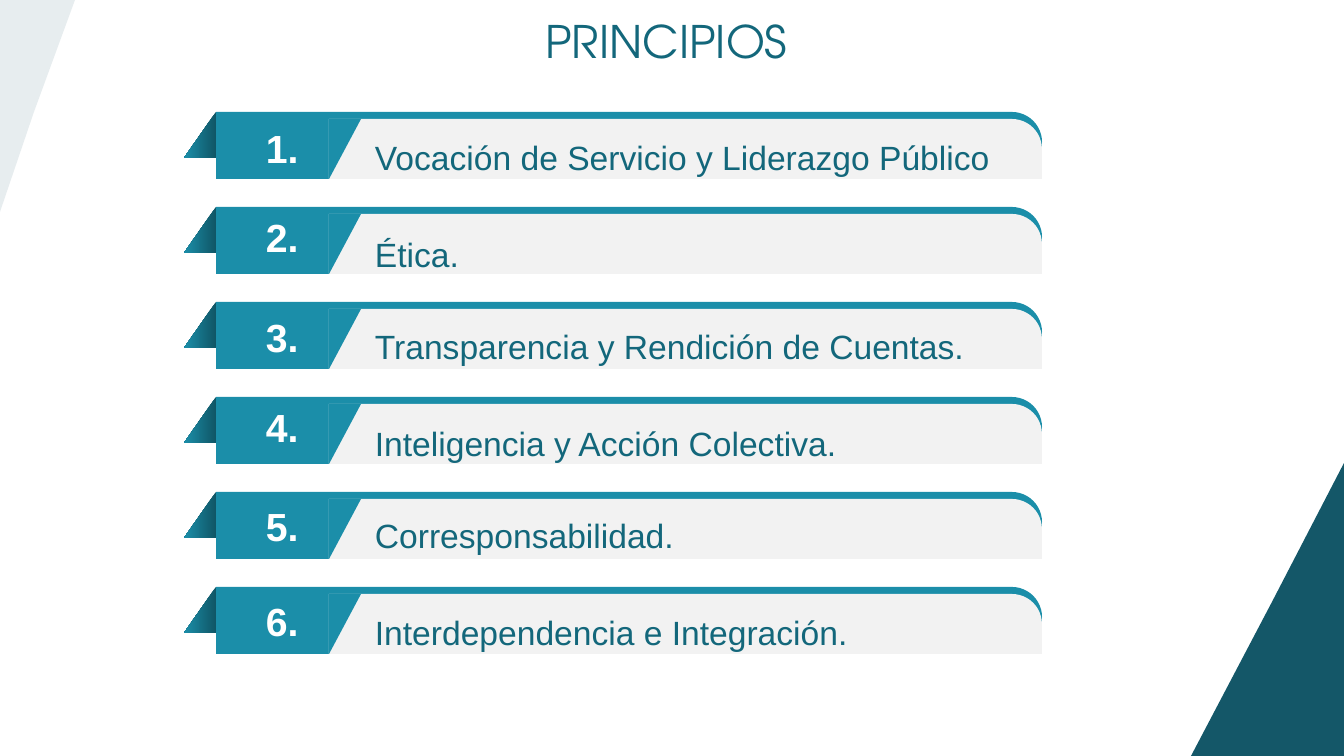
import pptx
import pptx.dml.color
import pptx.enum.shapes
import pptx.enum.text
import pptx.util

RGBColor = pptx.dml.color.RGBColor
SHAPE = pptx.enum.shapes.MSO_SHAPE
ALIGN = pptx.enum.text.PP_ALIGN
ANCHOR = pptx.enum.text.MSO_ANCHOR

# Content: wording, then top of the number and top of the wording in px
TITLE = "PRINCIPIOS"
PRINCIPLES = [
    ("Vocación de Servicio y Liderazgo Público", 119, 112),
    ("Ética.", 208, 209),
    ("Transparencia y Rendición de Cuentas.", 308, 301),
    ("Inteligencia y Acción Colectiva.", 398, 398),
    ("Corresponsabilidad.", 497, 490),
    ("Interdependencia e Integración.", 592, 587),
]
LEFT_CORNER = [(0, 0), (75, 0), (34, 112), (0, 212)]
RIGHT_CORNER = [(1272, 602), (1344, 463), (1344, 756), (1191, 756)]

TEAL = RGBColor(0x1B, 0x8E, 0xA9)
FOLD_TEAL = RGBColor(0x10, 0x56, 0x66)
CORNER_TEAL = RGBColor(0x14, 0x57, 0x68)
PALE_TEAL = RGBColor(0xE7, 0xED, 0xEF)
TEXT_TEAL = RGBColor(0x13, 0x67, 0x7B)
PANEL_GRAY = RGBColor(0xF2, 0xF2, 0xF2)
WHITE = RGBColor(0xFF, 0xFF, 0xFF)

# Lengths in px
EMU_PER_PX = 914400 / 100.8
SLIDE_WIDTH, SLIDE_HEIGHT = 1344, 756
FIRST_TOP, ROW_STEP = 112, 95
BAR_LEFT, BAR_WIDTH, BAR_HEIGHT = 216, 826, 67
FOLD_WIDTH, FOLD_HEIGHT = 32, 46
PANEL_LEFT, PANEL_HEIGHT = 329, 60
NOTCH_WIDTH = 32


def px(*lengths):
    return [pptx.util.Emu(round(length * EMU_PER_PX)) for length in lengths]


def paint(shape, color):
    shape.shadow.inherit = False
    shape.line.fill.background()
    shape.fill.solid()
    shape.fill.fore_color.rgb = color


def add_shape(slide, kind, box, color):
    shape = slide.shapes.add_shape(kind, *px(*box))
    paint(shape, color)
    return shape


def add_turned_shape(slide, kind, box, color):
    """Fill the given box with a shape turned by a quarter."""
    left, top, width, height = box
    shift = (width - height) / 2
    shape = add_shape(slide, kind, (left + shift, top - shift, height, width), color)
    shape.rotation = 90
    return shape


def add_corner(slide, points, color):
    builder = slide.shapes.build_freeform(*points[0], scale=EMU_PER_PX)
    builder.add_line_segments(points[1:])
    paint(builder.convert_to_shape(), color)


def set_text(shape, text, size, font_name, color):
    frame = shape.text_frame
    frame.word_wrap = True
    frame.vertical_anchor = ANCHOR.TOP
    paragraph = frame.paragraphs[0]
    paragraph.text = text
    paragraph.font.size = pptx.util.Pt(size)
    paragraph.font.name = font_name
    paragraph.font.color.rgb = color
    return paragraph


def add_banner(slide, top):
    # Folded end behind the bar
    fold = add_shape(slide, SHAPE.RIGHT_TRIANGLE,
                     (BAR_LEFT - FOLD_WIDTH, top, FOLD_WIDTH, FOLD_HEIGHT), TEAL)
    fold._element.spPr.xfrm.set("flipH", "1")
    fold.fill.gradient()
    fold.fill.gradient_angle = 0
    for stop, color in zip(fold.fill.gradient_stops, (FOLD_TEAL, TEAL)):
        stop.color.rgb = color

    # Bar, grey panel and slanted notch
    bar = add_turned_shape(slide, SHAPE.ROUND_2_SAME_RECTANGLE,
                           (BAR_LEFT, top, BAR_WIDTH, BAR_HEIGHT), TEAL)
    bar.adjustments[0] = 0.45
    panel_top = top + BAR_HEIGHT - PANEL_HEIGHT
    panel_width = BAR_LEFT + BAR_WIDTH - PANEL_LEFT
    panel = add_shape(slide, SHAPE.ROUND_1_RECTANGLE,
                      (PANEL_LEFT, panel_top, panel_width, PANEL_HEIGHT), PANEL_GRAY)
    panel.adjustments[0] = 0.5
    add_turned_shape(slide, SHAPE.RIGHT_TRIANGLE,
                     (PANEL_LEFT, panel_top, NOTCH_WIDTH, PANEL_HEIGHT), TEAL)


def main():
    presentation = pptx.Presentation()
    presentation.slide_width, presentation.slide_height = px(SLIDE_WIDTH, SLIDE_HEIGHT)
    slide = presentation.slides.add_slide(presentation.slide_layouts[5])

    # Corner decoration
    add_corner(slide, RIGHT_CORNER, CORNER_TEAL)
    add_corner(slide, LEFT_CORNER, PALE_TEAL)

    # Title
    title = slide.shapes.title
    title.left, title.top, title.width, title.height = px(87, 15, 1159, 75)
    paragraph = set_text(title, TITLE, 32, "TeX Gyre Adventor", TEXT_TEAL)
    paragraph.alignment = ALIGN.CENTER
    paragraph.line_spacing = 0.9

    # Numbered banners
    for row, (wording, number_top, wording_top) in enumerate(PRINCIPLES):
        add_banner(slide, FIRST_TOP + row * ROW_STEP)

        wording_box = slide.shapes.add_textbox(*px(365, wording_top, 673, 64))
        paragraph = set_text(wording_box, wording, 24, "Arial", TEXT_TEAL)
        paragraph.alignment = ALIGN.JUSTIFY
        paragraph.line_spacing = 1.5
        paragraph.space_after = pptx.util.Pt(8)

        number_box = slide.shapes.add_textbox(*px(256, number_top, 89, 58))
        paragraph = set_text(number_box, f"{row + 1}.", 28, "Arial", WHITE)
        paragraph.font.bold = True

    presentation.save("out.pptx")


if __name__ == "__main__":
    main()
